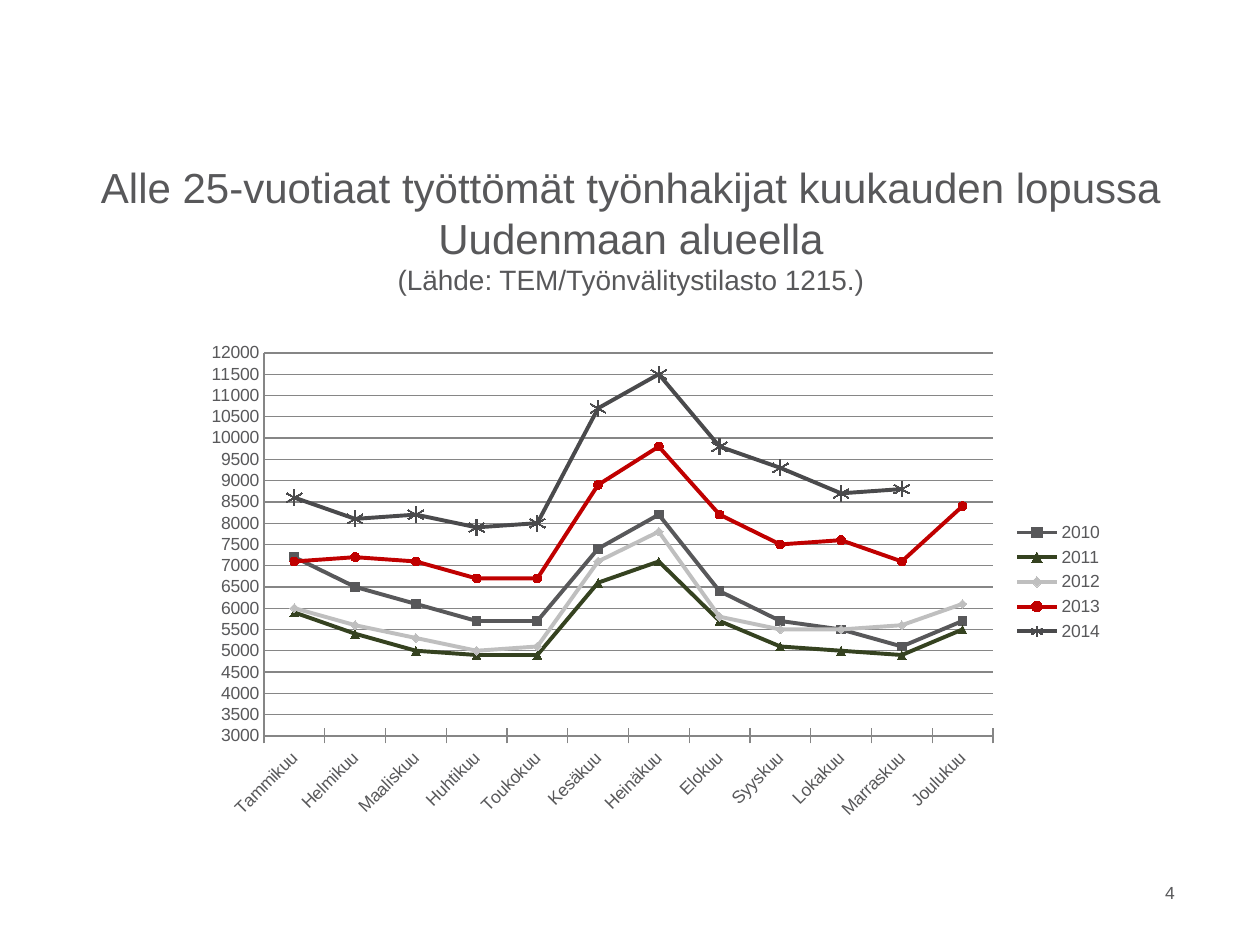
from dataclasses import dataclass

from lxml import etree
from pptx import Presentation
from pptx import util as u
from pptx.chart.data import CategoryChartData
from pptx.dml.color import RGBColor
from pptx.enum import chart as ch
from pptx.enum import text
from pptx.oxml.ns import qn

PX = 914400 / 126  # EMU in one px


def px(*lengths):
    return [u.Emu(round(length * PX)) for length in lengths]


@dataclass(frozen=True)
class Theme:
    font: str = "Arial"
    ink: str = "58585A"
    grid: str = "868686"
    title: int = 24
    source: int = 16
    small: int = 10
    hairline: float = 0.75
    series_line: float = 2.25


MONTHS = ["Tammikuu", "Helmikuu", "Maaliskuu", "Huhtikuu", "Toukokuu", "Kesäkuu",
          "Heinäkuu", "Elokuu", "Syyskuu", "Lokakuu", "Marraskuu", "Joulukuu"]
MARK = ch.XL_MARKER_STYLE
# year: (colour, marker, marker size, job seekers by month)
YEARS = {
    "2010": ("58585A", MARK.SQUARE, 5,
             [7200, 6500, 6100, 5700, 5700, 7400, 8200, 6400, 5700, 5500, 5100, 5700]),
    "2011": ("354220", MARK.TRIANGLE, 5,
             [5900, 5400, 5000, 4900, 4900, 6600, 7100, 5700, 5100, 5000, 4900, 5500]),
    "2012": ("BFBFBF", MARK.DIAMOND, 5,
             [6000, 5600, 5300, 5000, 5100, 7100, 7800, 5800, 5500, 5500, 5600, 6100]),
    "2013": ("C00000", MARK.CIRCLE, 5,
             [7100, 7200, 7100, 6700, 6700, 8900, 9800, 8200, 7500, 7600, 7100, 8400]),
    "2014": ("4A4A4C", MARK.STAR, 9,
             [8600, 8100, 8200, 7900, 8000, 10700, 11500, 9800, 9300, 8700, 8800, None]),
}


class SlideBuilder:
    def __init__(self, slide, theme):
        self.slide = slide
        self.theme = theme

    def style_font(self, font, size):
        font.name = self.theme.font
        font.size = u.Pt(size)
        font.bold = False
        font.color.rgb = RGBColor.from_string(self.theme.ink)

    def style_line(self, line, colour, width):
        line.color.rgb = RGBColor.from_string(colour)
        line.width = u.Pt(width)

    def add_run(self, paragraph, words, size):
        run = paragraph.add_run()
        run.text = words
        self.style_font(run.font, size)

    def title(self, box, heading, source):
        title = self.slide.shapes.title
        title.left, title.top, title.width, title.height = px(*box)
        frame = title.text_frame
        frame.word_wrap = True
        frame.auto_size = text.MSO_AUTO_SIZE.NONE
        frame.vertical_anchor = text.MSO_ANCHOR.MIDDLE
        paragraph = frame.paragraphs[0]
        paragraph.alignment = text.PP_ALIGN.CENTER
        self.add_run(paragraph, heading, self.theme.title)
        paragraph.add_line_break()
        self.add_run(paragraph, source, self.theme.source)

    def page_number(self, box, number):
        frame = self.slide.shapes.add_textbox(*px(*box)).text_frame
        frame.word_wrap = True
        paragraph = frame.paragraphs[0]
        paragraph.alignment = text.PP_ALIGN.RIGHT
        self.add_run(paragraph, number, self.theme.small)

    def line_chart(self, box, plot, categories, years):
        data = CategoryChartData(number_format="0")
        data.categories = categories
        for year, (*_, values) in years.items():
            data.add_series(year, values)
        chart = self.slide.shapes.add_chart(
            ch.XL_CHART_TYPE.LINE_MARKERS, *px(*box), data).chart
        self.style_font(chart.font, self.theme.small)
        chart.has_title = False
        chart.has_legend = True
        chart.legend.position = ch.XL_LEGEND_POSITION.RIGHT
        chart.legend.include_in_layout = False
        chart.plots[0].vary_by_categories = False
        self.axes(chart)
        self.place_plot(chart, box, plot)
        for series, (colour, marker, size, _) in zip(chart.plots[0].series, years.values()):
            self.series(series, colour, marker, size)

    def axes(self, chart):
        months, counts = chart.category_axis, chart.value_axis
        counts.minimum_scale, counts.maximum_scale = 3000, 12000
        counts.major_unit = 500
        counts.major_tick_mark = ch.XL_TICK_MARK.NONE
        months.major_tick_mark = ch.XL_TICK_MARK.CROSS
        for line in (counts.major_gridlines.format.line, counts.format.line,
                     months.format.line):
            self.style_line(line, self.theme.grid, self.theme.hairline)
        # Slanted month names
        self.style_font(months.tick_labels.font, self.theme.small)
        for body in chart.element.xpath(".//c:catAx/c:txPr/a:bodyPr"):
            body.set("rot", str(-45 * 60000))
            body.set("vert", "horz")

    def place_plot(self, chart, box, plot):
        area = chart.element.xpath(".//c:plotArea")[0]
        for old in area.findall(qn("c:layout")):
            area.remove(old)
        layout = etree.Element(qn("c:layout"))
        area.insert(0, layout)
        manual = etree.SubElement(layout, qn("c:manualLayout"))
        left, top, width, height = box
        shares = {"x": (plot[0] - left) / width, "y": (plot[1] - top) / height,
                  "w": plot[2] / width, "h": plot[3] / height}
        settings = {"layoutTarget": "inner", "xMode": "edge", "yMode": "edge",
                    **{name: f"{share:.4f}" for name, share in shares.items()}}
        for name, value in settings.items():
            etree.SubElement(manual, qn(f"c:{name}")).set("val", value)

    def series(self, series, colour, marker, size):
        series.smooth = False
        self.style_line(series.format.line, colour, self.theme.series_line)
        series.marker.style = marker
        series.marker.size = size
        look = series.marker.format
        self.style_line(look.line, colour, self.theme.hairline)
        if marker == MARK.STAR:
            look.fill.background()
        else:
            look.fill.solid()
            look.fill.fore_color.rgb = RGBColor.from_string(colour)


def main():
    deck = Presentation()
    deck.slide_width, deck.slide_height = px(1260, 945)
    page = SlideBuilder(deck.slides.add_slide(deck.slide_layouts[5]), Theme())

    # Heading with its source
    page.title((64, 185, 1134, 88),
               "Alle 25-vuotiaat työttömät työnhakijat kuukauden lopussa Uudenmaan alueella",
               "(Lähde: TEM/Työnvälitystilasto 1215.)")
    # Unemployed job seekers by month, one line a year
    page.line_chart((194, 334, 922, 496), (264, 353, 729, 383), MONTHS, YEARS)
    # Footer
    page.page_number((1131, 876, 56, 50), "4")

    deck.save("out.pptx")


if __name__ == "__main__":
    main()
